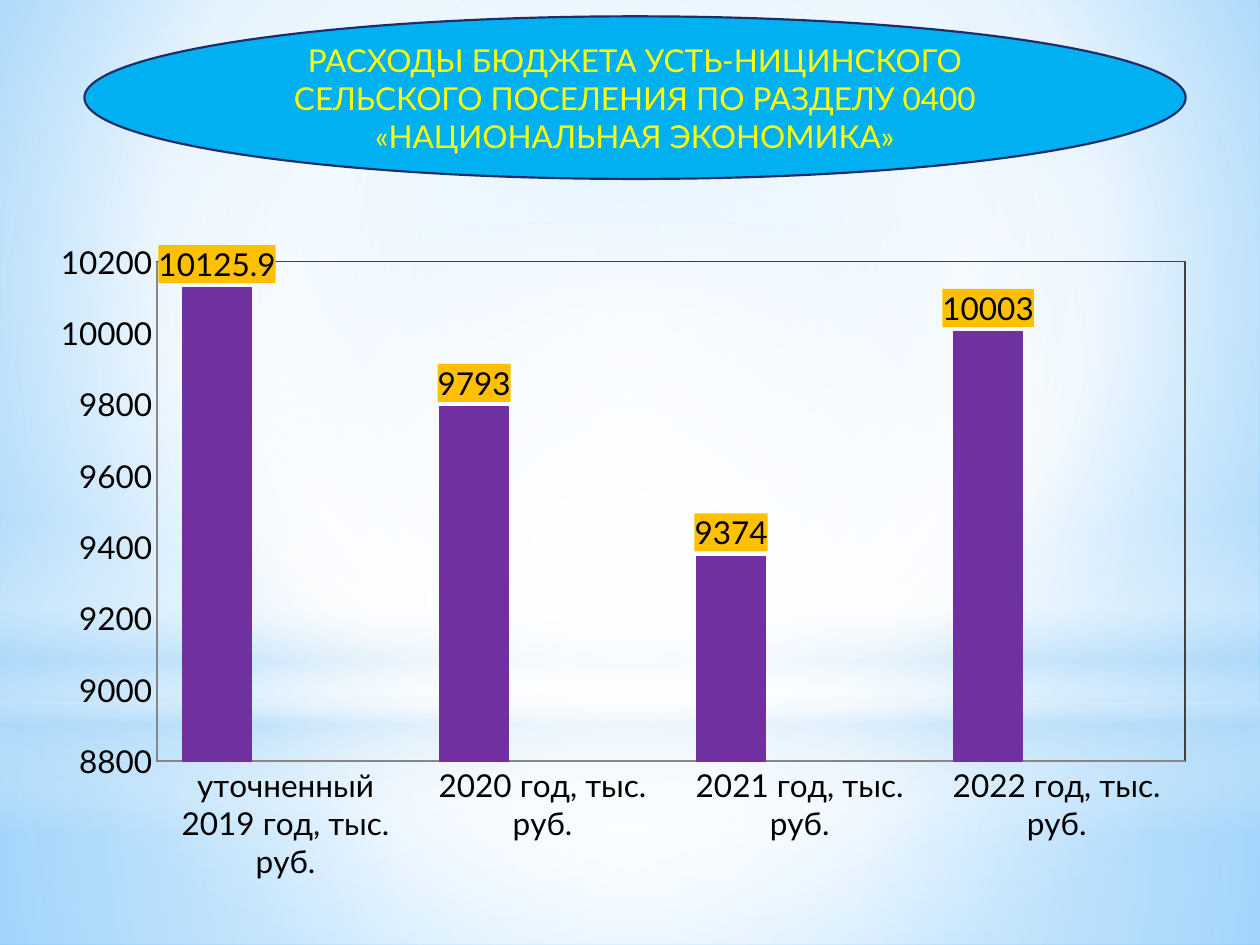
from lxml.etree import SubElement
from pptx import Presentation
from pptx.chart.data import CategoryChartData
from pptx.dml.color import RGBColor
from pptx.enum.chart import XL_CHART_TYPE, XL_LABEL_POSITION, XL_TICK_MARK
from pptx.enum.shapes import MSO_SHAPE
from pptx.enum.text import MSO_ANCHOR, PP_ALIGN
from pptx.oxml import parse_xml
from pptx.oxml.ns import nsdecls, qn
from pptx.util import Inches, Pt

TITLE = ("РАСХОДЫ БЮДЖЕТА УСТЬ-НИЦИНСКОГО СЕЛЬСКОГО ПОСЕЛЕНИЯ "
         "ПО РАЗДЕЛУ 0400 «НАЦИОНАЛЬНАЯ ЭКОНОМИКА»")
SPENDING = {
    "уточненный 2019 год, тыс. руб.": 10125.9,
    "2020 год, тыс. руб.": 9793,
    "2021 год, тыс. руб.": 9374,
    "2022 год, тыс. руб.": 10003,
}
FONT = "Lato"
COLORS = {
    "white": "FFFFFF", "haze": "B4DCFA", "sky": "9ED5FF", "deep": "5BB9FF",
    "oval": "00B0F0", "oval_line": "1F2E69", "title": "FFFF00",
    "bar": "7030A0", "series_2": "5ECCF3", "series_3": "A7EA52",
    "label": "FFC000", "text": "000000", "axis": "878787", "frame": "404040",
}
CENTER = (50, 50, 50, 50)

# Stops are (position, colour, opacity), all in percent.
BACKGROUND = [(0, "sky", 100), (60, "white", 100), (100, "deep", 100)]
LAYERS = [
    (MSO_SHAPE.RECTANGLE, (0, 5.58, 10, 1.92), CENTER,
     [(0, "white", 91), (37, "white", 76), (100, "haze", 79)]),
    (MSO_SHAPE.RECTANGLE, (0, 0, 10, 5.58), CENTER,
     [(0, "white", 89), (48, "white", 62), (100, "haze", 79)]),
    (MSO_SHAPE.RECTANGLE, (0, 4.12, 10, 2.5), None,
     [(0, "white", 0), (29, "white", 30), (45, "haze", 40),
      (55, "white", 26), (65, "haze", 60), (100, "white", 0)]),
    (MSO_SHAPE.OVAL, (0, 1.75, 10, 5.58), CENTER,
     [(0, "white", 100), (56, "white", 0)]),
]
PLOT_AREA = {"x": 0.105, "y": 0.041, "w": 0.886, "h": 0.748}
VALUE_AXIS = {"minimum_scale": 8800, "maximum_scale": 10200, "major_unit": 200,
              "has_major_gridlines": False}


def rgb(name):
    return RGBColor.from_string(COLORS[name])


def set_gradient(props, stops, focus):
    """Swap the solid fill in props for a circular gradient, or a vertical one without focus."""
    gs = "".join(
        f'<a:gs pos="{pos * 1000}"><a:srgbClr val="{COLORS[color]}">'
        f'<a:alpha val="{alpha * 1000}"/></a:srgbClr></a:gs>'
        for pos, color, alpha in stops)
    if focus:
        rect = " ".join(f'{side}="{v * 1000}"' for side, v in zip("ltrb", focus))
        shade = f'<a:path path="circle"><a:fillToRect {rect}/></a:path>'
    else:
        shade = '<a:lin ang="5400000" scaled="0"/>'
    grad = parse_xml(f'<a:gradFill {nsdecls("a")} rotWithShape="1">'
                     f'<a:gsLst>{gs}</a:gsLst>{shade}</a:gradFill>')
    props.replace(props.find(qn("a:solidFill")), grad)


def add_solid(s, kind, box, color):
    sp = s.shapes.add_shape(kind, *map(Inches, box))
    sp.shadow.inherit = False
    sp.fill.solid()
    sp.fill.fore_color.rgb = rgb(color)
    return sp


def add_backdrop(s):
    fill = s.background.fill
    fill.solid()
    fill.fore_color.rgb = rgb("white")
    set_gradient(s.element.find(".//" + qn("p:bgPr")), BACKGROUND, (20, 10, 20, 60))
    for kind, box, focus, stops in LAYERS:
        sp = add_solid(s, kind, box, "white")
        sp.line.fill.background()
        set_gradient(sp.element.spPr, stops, focus)


def add_spending_chart(s):
    data = CategoryChartData()
    data.categories = list(SPENDING)
    data.add_series("Series 1", list(SPENDING.values()))
    for name in ("Series 2", "Series 3"):
        data.add_series(name, [None] * len(SPENDING))
    box = map(Inches, (0.28, 1.86, 9.21, 5.3))
    chart = s.shapes.add_chart(XL_CHART_TYPE.COLUMN_CLUSTERED, *box, data).chart
    chart.has_legend = chart.has_title = False
    chart.font.name, chart.font.size = FONT, Pt(18)
    chart.font.color.rgb = rgb("text")

    for name, value in VALUE_AXIS.items():
        setattr(chart.value_axis, name, value)
    for axis in (chart.category_axis, chart.value_axis):
        axis.major_tick_mark = axis.minor_tick_mark = XL_TICK_MARK.NONE
        axis.format.line.color.rgb = rgb("axis")
        axis.format.line.width = Pt(0.75)

    plot = chart.plots[0]
    plot.gap_width, plot.overlap, plot.vary_by_categories = 75, 0, False
    for series, color in zip(plot.series, ("bar", "series_2", "series_3")):
        series.format.fill.solid()
        series.format.fill.fore_color.rgb = rgb(color)
        labels = series.data_labels
        labels.show_value = True
        labels.position = XL_LABEL_POSITION.OUTSIDE_END
        labels.font.size = Pt(18)
    bars = plot.series[0].format.line
    bars.color.rgb, bars.width = rgb("bar"), Pt(0.75)
    format_chart_areas(chart)


def format_chart_areas(chart):
    """Fill the value labels, frame the plot area and fix its inner position."""
    for labels in chart.element.iter(qn("c:dLbls")):
        labels.find(qn("c:txPr")).addprevious(parse_xml(
            f'<c:spPr {nsdecls("c", "a")}><a:solidFill>'
            f'<a:srgbClr val="{COLORS["label"]}"/></a:solidFill></c:spPr>'))
    area = chart.element.find(".//" + qn("c:plotArea"))
    area.append(parse_xml(
        f'<c:spPr {nsdecls("c", "a")}><a:noFill/><a:ln w="9525"><a:solidFill>'
        f'<a:srgbClr val="{COLORS["frame"]}"/></a:solidFill></a:ln></c:spPr>'))
    layout = area.find(qn("c:layout"))
    if layout is None:
        layout = parse_xml(f'<c:layout {nsdecls("c")}/>')
        area.insert(0, layout)
    manual = SubElement(layout, qn("c:manualLayout"))
    settings = {"layoutTarget": "inner", "xMode": "edge", "yMode": "edge", **PLOT_AREA}
    for tag, value in settings.items():
        SubElement(manual, qn(f"c:{tag}")).set("val", str(value))


def add_title_oval(s):
    sp = add_solid(s, MSO_SHAPE.OVAL, (0.67, 0.13, 8.74, 1.29), "oval")
    sp.line.color.rgb, sp.line.width = rgb("oval_line"), Pt(1.25)
    tf = sp.text_frame
    tf.word_wrap, tf.vertical_anchor = True, MSO_ANCHOR.MIDDLE
    p = tf.paragraphs[0]
    p.alignment = PP_ALIGN.CENTER
    r = p.add_run()
    r.text = TITLE
    r.font.name, r.font.size = FONT, Pt(18)
    r.font.color.rgb = rgb("title")


def main():
    prs = Presentation()
    prs.slide_width, prs.slide_height = Inches(10), Inches(7.5)
    s = prs.slides.add_slide(prs.slide_layouts[6])
    add_backdrop(s)
    add_spending_chart(s)
    add_title_oval(s)
    prs.save("out.pptx")


if __name__ == "__main__":
    main()
